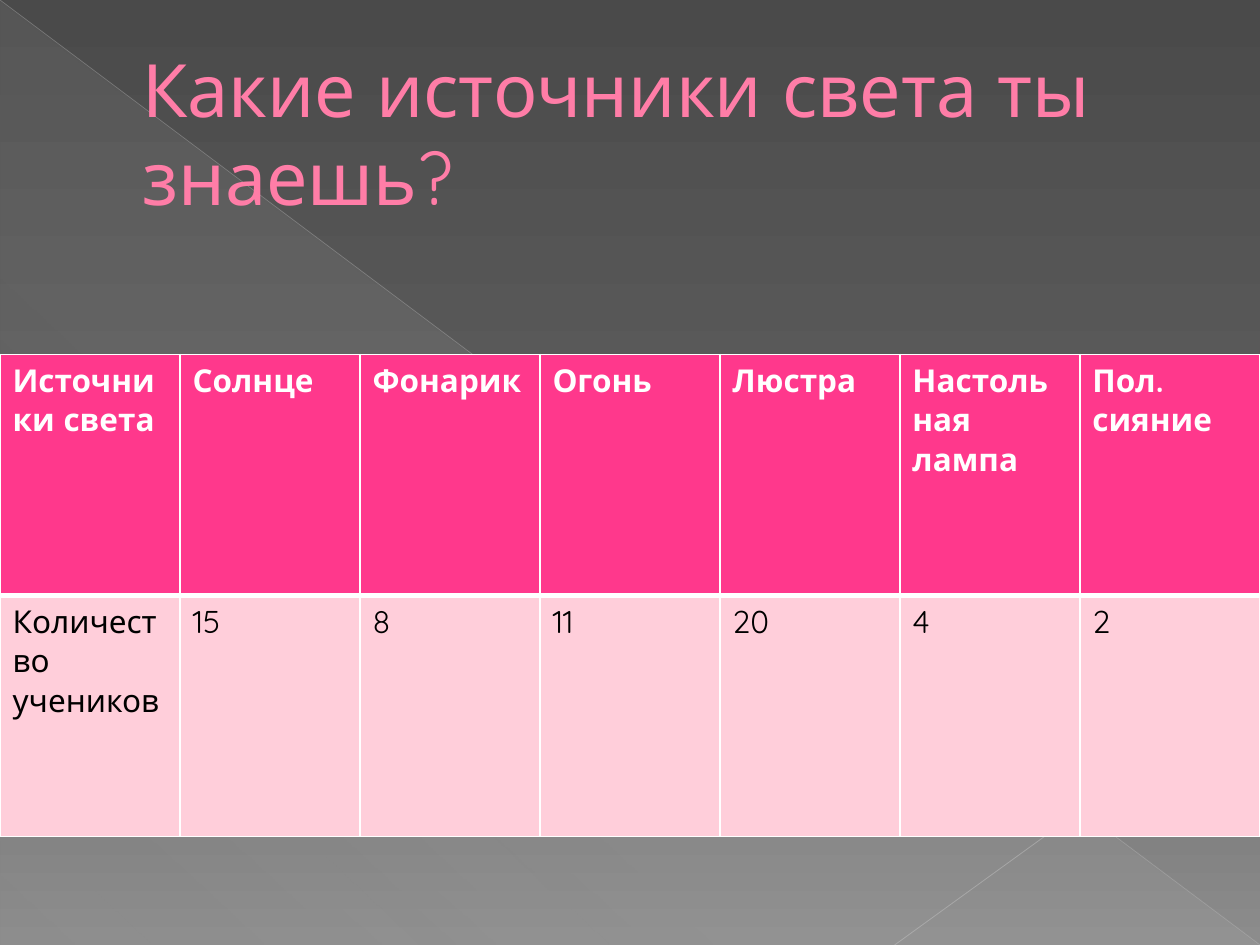
from lxml import etree
from pptx import Presentation
from pptx.dml.color import RGBColor
from pptx.enum.shapes import MSO_CONNECTOR, MSO_SHAPE
from pptx.enum.text import MSO_ANCHOR, PP_ALIGN
from pptx.oxml.ns import qn
from pptx.util import Inches, Pt

TRIANGLE = MSO_SHAPE.RIGHT_TRIANGLE
STRAIGHT = MSO_CONNECTOR.STRAIGHT
LEFT, MIDDLE = PP_ALIGN.LEFT, MSO_ANCHOR.MIDDLE

FONT = "Quicksand"
COLORS = {
    "title": "FF7DA7", "title_edge": "B12761", "white": "FFFFFF",
    "black": "000000", "header": "FF388C", "body": "FFCEDA",
    "glow": "D2D2D2", "diagonal": "BFBFBF", "corner": "C6C6C6",
}
BACKGROUND = [(0, "4A4A4A", 100), (60, "626262", 100), (100, "8C8C8C", 100)]
GLOW = [(0, COLORS["glow"], 10), (70, COLORS["glow"], 8), (100, COLORS["glow"], 1)]
SOURCES = [
    ("Источники света", "Количество учеников"),
    ("Солнце", "15"), ("Фонарик", "8"), ("Огонь", "11"), ("Люстра", "20"),
    ("Настольная лампа", "4"), ("Пол. сияние", "2"),
]


def add_color(parent, color, alpha=100):
    clr = etree.SubElement(parent, qn("a:srgbClr"), val=color)
    if alpha < 100:
        etree.SubElement(clr, qn("a:alpha"), val=str(alpha * 1000))


def add_line(parent, tag, color, width):
    ln = etree.SubElement(parent, qn(tag), w=str(Pt(width)))
    add_color(etree.SubElement(ln, qn("a:solidFill")), color)
    return ln


def set_gradient(fill, element, stops, angle):
    """Give the first gradient inside element its stops and clockwise angle."""
    fill.gradient()
    grad = element.find(".//" + qn("a:gradFill"))
    for child in list(grad):
        grad.remove(child)
    gs_list = etree.SubElement(grad, qn("a:gsLst"))
    for pos, color, alpha in stops:
        gs = etree.SubElement(gs_list, qn("a:gs"), pos=str(pos * 1000))
        add_color(gs, color, alpha)
    etree.SubElement(grad, qn("a:lin"), ang=str(angle * 60000), scaled="0")


class SlideBuilder:
    """Places elements by shares of the slide's width and height."""

    def __init__(self, prs):
        self.width, self.height = prs.slide_width, prs.slide_height
        self.slide = prs.slides.add_slide(prs.slide_layouts[5])

    def place(self, *shares):
        sizes = (self.width, self.height) * 2
        return [round(share * size) for share, size in zip(shares, sizes)]

    def format_run(self, r, size, color, bold=False):
        r.font.name, r.font.size, r.font.bold = FONT, Pt(size), bold
        r.font.color.rgb = RGBColor.from_string(COLORS[color])

    def background(self, stops, angle):
        set_gradient(self.slide.background.fill, self.slide.element, stops, angle)

    def triangle(self, box, stops, angle):
        sp = self.slide.shapes.add_shape(TRIANGLE, *self.place(*box))
        sp.shadow.inherit = False
        sp.line.fill.background()
        set_gradient(sp.fill, sp.element, stops, angle)

    def line(self, ends, color, width, alpha):
        cxn = self.slide.shapes.add_connector(STRAIGHT, *self.place(*ends))
        cxn.line.color.rgb = RGBColor.from_string(COLORS[color])
        cxn.line.width = Pt(width)
        clr = cxn.element.spPr.find(".//" + qn("a:srgbClr"))
        etree.SubElement(clr, qn("a:alpha"), val=str(alpha * 1000))
        etree.SubElement(cxn.element.spPr, qn("a:effectLst"))

    def title(self, text, box, indent):
        sp = self.slide.shapes.title
        sp.left, sp.top, sp.width, sp.height = self.place(*box)
        self.slide.shapes.element.append(sp.element)  # in front of the backdrop
        tf = sp.text_frame
        tf.text, tf.word_wrap, tf.vertical_anchor = text, True, MIDDLE
        p = tf.paragraphs[0]
        p.alignment = LEFT
        pPr = p._p.get_or_add_pPr()
        pPr.set("marL", str(Inches(indent)))
        pPr.set("indent", "0")
        r = p.runs[0]
        self.format_run(r, 42, "title")
        rPr = r.font._element
        rPr.insert(0, add_line(rPr, "a:ln", COLORS["title_edge"], 0.5))

    def cell(self, cell, text, is_header):
        cell.text = text
        self.format_run(cell.text_frame.paragraphs[0].runs[0], 18,
                        "white" if is_header else "black", is_header)
        tcPr = cell._tc.get_or_add_tcPr()
        widths = {"L": 1, "R": 1, "T": 1 if is_header else 3, "B": 3 if is_header else 1}
        for side, width in widths.items():
            add_line(tcPr, "a:ln" + side, COLORS["white"], width)
        cell.fill.solid()
        fill = COLORS["header" if is_header else "body"]
        cell.fill.fore_color.rgb = RGBColor.from_string(fill)

    def table(self, columns, box):
        rows = list(zip(*columns))
        frame = self.slide.shapes.add_table(len(rows), len(columns), *self.place(*box))
        for i, row in enumerate(rows):
            for j, text in enumerate(row):
                self.cell(frame.table.cell(i, j), text, i == 0)


def main():
    prs = Presentation()
    prs.slide_width, prs.slide_height = Inches(10), Inches(7.5)
    builder = SlideBuilder(prs)
    builder.background(BACKGROUND, 90)
    builder.triangle((0, 0, 1, 1), GLOW, 133)
    builder.line((0, 0, 1, 1), "diagonal", 0.39, 35)
    builder.line((1, 0.72, 0.71, 1), "corner", 0.47, 45)
    builder.title("Какие источники света ты знаешь?", (0.05, 0.04, 0.9, 0.2), 0.53)
    builder.table(SOURCES, (0, 0.375, 1, 0.51))
    prs.save("out.pptx")


if __name__ == "__main__":
    main()
